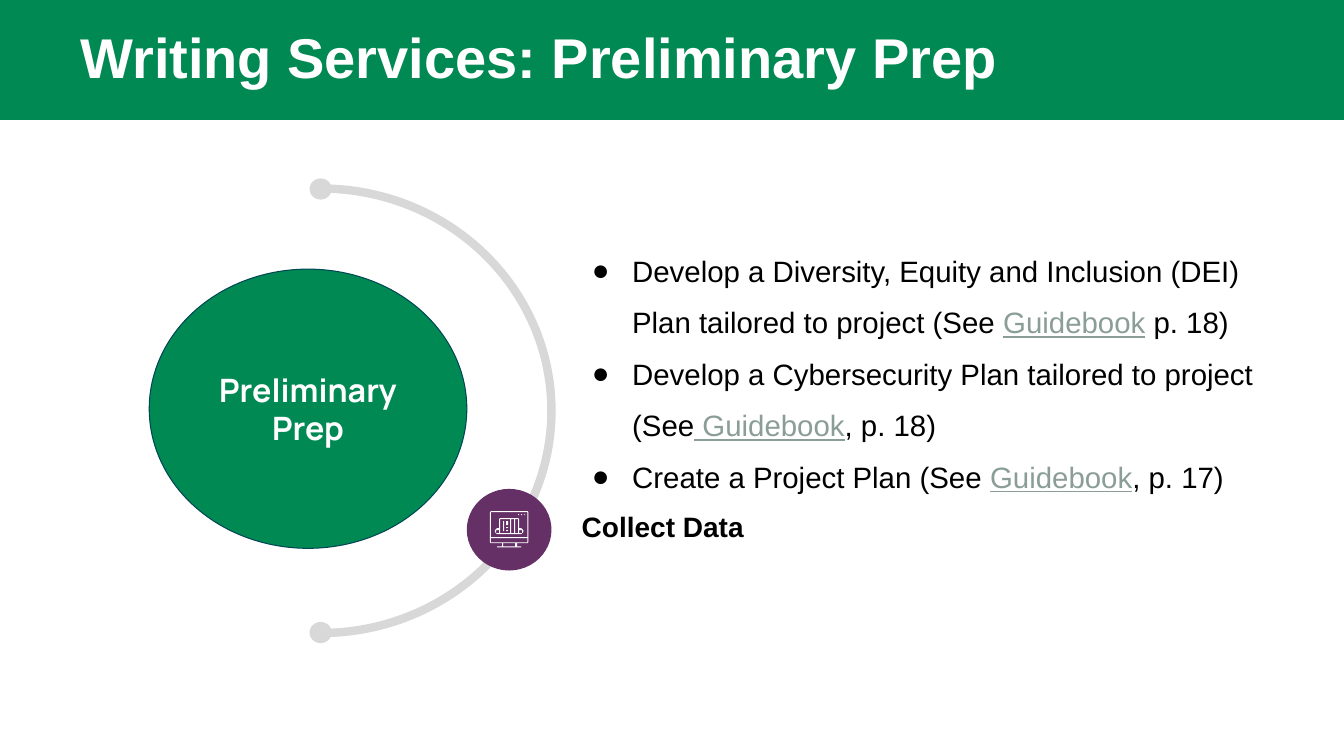
from lxml import etree
from pptx import Presentation
from pptx.dml.color import RGBColor
from pptx.enum.shapes import MSO_SHAPE
from pptx.enum.text import MSO_ANCHOR, PP_ALIGN
from pptx.oxml.ns import qn
from pptx.util import Pt

RECT, OVAL, ARC = MSO_SHAPE.RECTANGLE, MSO_SHAPE.OVAL, MSO_SHAPE.ARC
TOP, MIDDLE, BOTTOM = MSO_ANCHOR.TOP, MSO_ANCHOR.MIDDLE, MSO_ANCHOR.BOTTOM
LEFT, CENTER = PP_ALIGN.LEFT, PP_ALIGN.CENTER

PX = 9144  # 100 px to the inch
HUE = {"green": "008953", "teal": "004654", "grey": "D8D8D8", "plum": "653065",
       "white": "FFFFFF", "black": "000000", "link": "8A9E97"}

# Each item holds text, link and rest
ITEMS = [
    ("Develop a Diversity, Equity and Inclusion (DEI) Plan tailored to project (See ",
     "Guidebook", " p. 18)"),
    ("Develop a Cybersecurity Plan tailored to project (See", " Guidebook", ", p. 18)"),
    ("Create a Project Plan (See ", "Guidebook", ", p. 17)"),
]

# Icon outlines on a 38 by 36 grid
SCREEN = [(1, 0), (37, 0), (38, 1), (38, 31), (37, 32), (27, 32), (27, 35), (31, 35),
          (31, 36), (7, 36), (7, 35), (12, 35), (12, 32), (1, 32), (0, 31), (0, 1)]
HAT = [(10, 7), (28, 7), (29, 8), (29, 17), (31, 17), (33, 19), (33, 21), (31, 23),
       (7, 23), (5, 21), (5, 19), (7, 17), (9, 17), (9, 8)]
CUTS = [(1, 1, 37, 26), (1, 27, 37, 31), (13, 32, 25, 35),
        (10, 8, 20, 22), (21, 8, 24, 22), (25, 8, 28, 22),
        (6, 19, 9, 22), (29, 19, 32, 22),
        (13, 10, 14, 20), (16, 10, 18, 14), (16, 16, 18, 17), (16, 19, 18, 20)]
CUTS += [(x, 3, x + 1, 4) for x in (28, 31, 34)]


def rgb(name):
    return RGBColor.from_string(HUE[name])


def emu(*box):
    return [n * PX for n in box]


def paint(shape, fill=None, line=None, width=0):
    shape.shadow.inherit = False
    if fill:
        shape.fill.solid()
        shape.fill.fore_color.rgb = rgb(fill)
    else:
        shape.fill.background()
    if line:
        shape.line.color.rgb = rgb(line)
        shape.line.width = Pt(width)
    else:
        shape.line.fill.background()
    return shape


def draw(slide, kind, box, **look):
    return paint(slide.shapes.add_shape(kind, *emu(*box)), **look)


def setup(frame, anchor, pads):
    frame.word_wrap = True
    frame.vertical_anchor = anchor
    for side, pad in zip(("left", "top", "right", "bottom"), pads):
        setattr(frame, "margin_" + side, pad * PX)
    return frame


def write(para, text, hue, **style):
    run = para.add_run()
    run.text = text
    for key, value in ({"name": "Arial"} | style).items():
        setattr(run.font, key, value)
    run.font.color.rgb = rgb(hue)


def label(slide, box, anchor, pads):
    return setup(slide.shapes.add_textbox(*emu(*box)).text_frame, anchor, pads)


def bullet(para):
    props = para._p.get_or_add_pPr()
    props.set("marL", str(50 * PX))
    props.set("indent", str(-40 * PX))
    tint = etree.SubElement(props, qn("a:buClr"))
    etree.SubElement(tint, qn("a:srgbClr")).set("val", HUE["black"])
    etree.SubElement(props, qn("a:buFont")).set("typeface", "Arial")
    etree.SubElement(props, qn("a:buChar")).set("char", "●")


def header(slide, x, y, w, h):
    draw(slide, RECT, (x, y, w, h), fill="green")
    frame = label(slide, (x + 70, y, 1200, h - 4), MIDDLE, (10, 5, 10, 0))
    para = frame.paragraphs[0]
    para.line_spacing = 0.9
    write(para, "Writing Services: Preliminary Prep", "white", size=Pt(40), bold=True)


def icon(slide, x, y):
    loops = [SCREEN, HAT] + [[(a, b), (c, b), (c, d), (a, d)] for a, b, c, d in CUTS]
    pen = slide.shapes.build_freeform(*SCREEN[0], scale=PX)
    for loop in loops:
        pen.move_to(*loop[0])
        pen.add_line_segments(loop[1:], close=True)
    paint(pen.convert_to_shape(*emu(x, y)), fill="white")


def wheel(slide, x, y, w, h):
    # Half ring with a dot at each end
    arc = draw(slide, ARC, (x, y, w, h), line="grey", width=6)
    arc.adjustments[0], arc.adjustments[1] = 162, 54.105
    for top in (y - 10, y + h - 11):
        draw(slide, OVAL, (x + 217, top, 22, 21), fill="grey")
    # Data badge
    draw(slide, OVAL, (x + 373, y + 298, 84, 81), fill="plum")
    icon(slide, x + 396, y + 320)
    # Hub
    hub = draw(slide, OVAL, (x + 58, y + 80, 315, 277),
               fill="green", line="teal", width=0.75)
    para = setup(hub.text_frame, MIDDLE, (10, 10, 10, 10)).paragraphs[0]
    para.alignment = CENTER
    write(para, "Preliminary Prep", "white", name="Manrope", size=Pt(23), bold=True)


def tasks(slide, x, y, w, h):
    pads = (7, 4, 7, 4)
    # Heading by the badge
    para = label(slide, (x, y + 283, 246, 29), BOTTOM, pads).paragraphs[0]
    write(para, "Collect Data", "black", size=Pt(20), bold=True)
    # Bullet list
    frame = label(slide, (x, y, w, h), TOP, pads)
    for i, (lead, link, tail) in enumerate(ITEMS):
        para = frame.add_paragraph() if i else frame.paragraphs[0]
        para.alignment = LEFT
        para.line_spacing = 1.46
        bullet(para)
        write(para, lead, "black", size=Pt(21))
        write(para, link, "link", size=Pt(21), underline=True)
        write(para, tail, "black", size=Pt(21))


def main():
    deck = Presentation()
    deck.slide_width, deck.slide_height = emu(1333, 750)
    slide = deck.slides.add_slide(deck.slide_layouts[6])
    header(slide, 0, 0, 1333, 119)
    wheel(slide, 90, 187, 457, 441)
    tasks(slide, 570, 231, 710, 277)
    deck.save("out.pptx")


if __name__ == "__main__":
    main()
